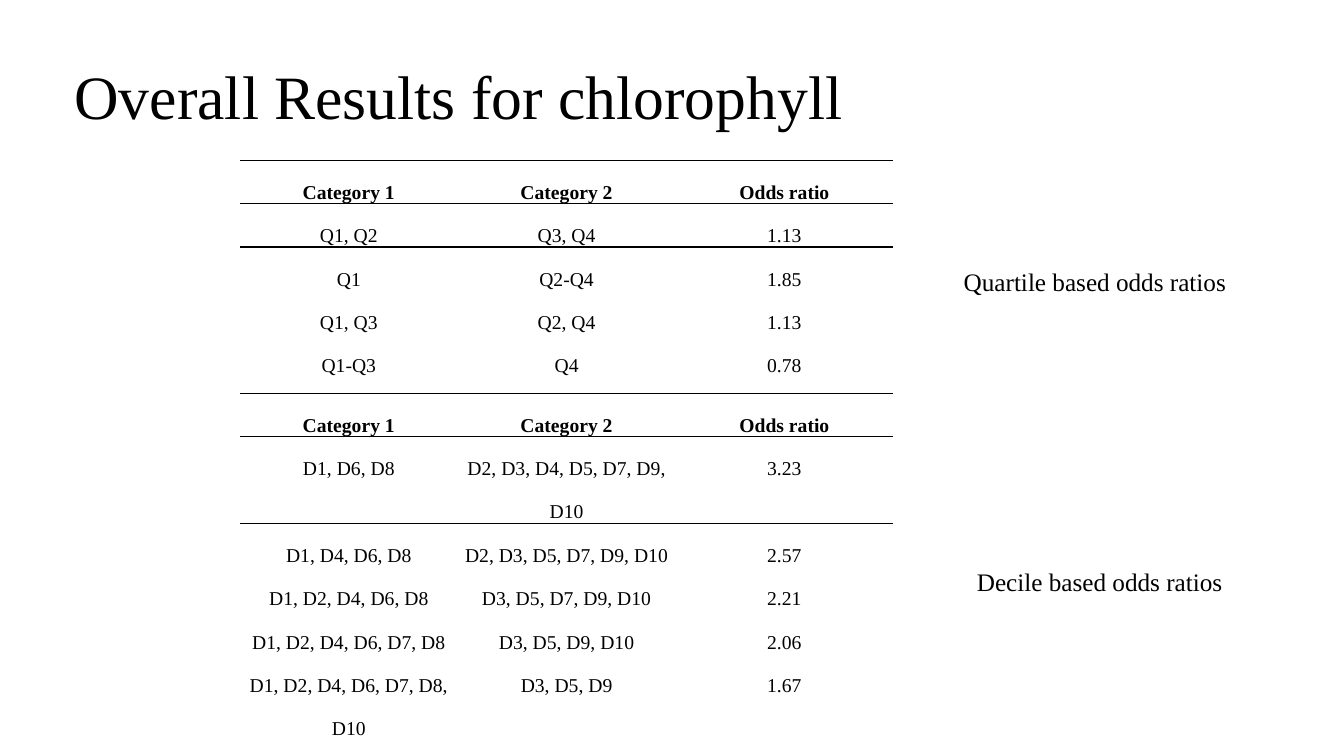
"""Build the slide of quartile and decile odds ratios for chlorophyll."""
from dataclasses import dataclass

from lxml.etree import SubElement
from pptx import Presentation
from pptx.dml.color import RGBColor
from pptx.enum.text import MSO_ANCHOR, MSO_AUTO_SIZE, PP_ALIGN
from pptx.oxml.ns import qn
from pptx.slide import Slide
from pptx.table import _Cell
from pptx.text.text import _Paragraph
from pptx.util import Inches, Pt

BLACK = RGBColor(0x00, 0x00, 0x00)
FONT = "Times New Roman"
NO_STYLE = "{2D5ABB26-0587-4C30-8999-92F81FD0307C}"
HEADER = ("Category 1", "Category 2", "Odds ratio")
TABLE_LEFT, COL_WIDTH, ROW_HEIGHT = 2.38, 2.16, 0.4
CELL_FORMAT = {
    "margin_left": Inches(0.07),
    "margin_right": Inches(0.07),
    "margin_top": 0,
    "margin_bottom": 0,
}
TITLE_FORMAT = {"word_wrap": True, "vertical_anchor": MSO_ANCHOR.MIDDLE}
LABEL_FORMAT = {"word_wrap": False, "auto_size": MSO_AUTO_SIZE.SHAPE_TO_FIT_TEXT}


@dataclass(frozen=True)
class TextItem:
    text: str
    left: float
    top: float
    width: float
    height: float
    size: int
    spacing: float
    frame_format: dict


@dataclass(frozen=True)
class OddsTable:
    top: float
    rows: tuple[tuple[str, str, str], ...]


TEXTS = (
    TextItem("Overall Results for chlorophyll", 0.64, 0.26, 11.5, 1.45, 44, 0.9, TITLE_FORMAT),
    TextItem("Quartile based odds ratios", 9.46, 2.59, 2.96, 0.4, 18, 1.0, LABEL_FORMAT),
    TextItem("Decile based odds ratios", 9.59, 5.57, 2.69, 0.4, 18, 1.0, LABEL_FORMAT),
)
TABLES = (
    OddsTable(1.59, (
        ("Q1, Q2", "Q3, Q4", "1.13"),
        ("Q1", "Q2-Q4", "1.85"),
        ("Q1, Q3", "Q2, Q4", "1.13"),
        ("Q1-Q3", "Q4", "0.78"),
    )),
    OddsTable(3.9, (
        ("D1, D6, D8", "D2, D3, D4, D5, D7, D9, D10", "3.23"),
        ("D1, D4, D6, D8", "D2, D3, D5, D7, D9, D10", "2.57"),
        ("D1, D2, D4, D6, D8", "D3, D5, D7, D9, D10", "2.21"),
        ("D1, D2, D4, D6, D7, D8", "D3, D5, D9, D10", "2.06"),
        ("D1, D2, D4, D6, D7, D8, D10", "D3, D5, D9", "1.67"),
    )),
)


def apply_format(target: object, values: dict) -> None:
    for name, value in values.items():
        setattr(target, name, value)


def write(p: _Paragraph, text: str, size: int, spacing: float, bold: bool = False) -> None:
    p.line_spacing = spacing
    r = p.add_run()
    r.text = text
    apply_format(r.font, {"name": FONT, "size": Pt(size), "bold": bold})
    r.font.color.rgb = BLACK


def add_border(cell: _Cell, side: str) -> None:
    ln = SubElement(cell._tc.get_or_add_tcPr(), qn(f"a:{side}"), w=str(Pt(1)))
    fill = SubElement(ln, qn("a:solidFill"))
    SubElement(fill, qn("a:srgbClr"), val=str(BLACK))


def add_text(s: Slide, item: TextItem) -> None:
    box = map(Inches, (item.left, item.top, item.width, item.height))
    tf = s.shapes.add_textbox(*box).text_frame
    apply_format(tf, item.frame_format)
    write(tf.paragraphs[0], item.text, item.size, item.spacing)


def add_odds_table(s: Slide, odds: OddsTable) -> None:
    rows = (HEADER, *odds.rows)
    table = s.shapes.add_table(
        len(rows), len(HEADER), Inches(TABLE_LEFT), Inches(odds.top),
        Inches(COL_WIDTH * len(HEADER)), Inches(ROW_HEIGHT * len(rows)),
    ).table
    apply_format(table, {"first_row": False, "horz_banding": False})
    table._tbl.tblPr.find(qn("a:tableStyleId")).text = NO_STYLE
    for i, row in enumerate(rows):
        for j, text in enumerate(row):
            cell = table.cell(i, j)
            apply_format(cell, CELL_FORMAT)
            p = cell.text_frame.paragraphs[0]
            p.alignment = PP_ALIGN.CENTER
            write(p, text, 14, 2.0, bold=i == 0)
            if i <= 1:
                add_border(cell, "lnT")
            if i == 0:
                add_border(cell, "lnB")
            cell.fill.background()


def main() -> None:
    prs = Presentation()
    apply_format(prs, {"slide_width": Inches(13.33), "slide_height": Inches(7.5)})
    s = prs.slides.add_slide(prs.slide_layouts[6])
    for odds in TABLES:
        add_odds_table(s, odds)
    for item in TEXTS:
        add_text(s, item)
    prs.save("out.pptx")


if __name__ == "__main__":
    main()
